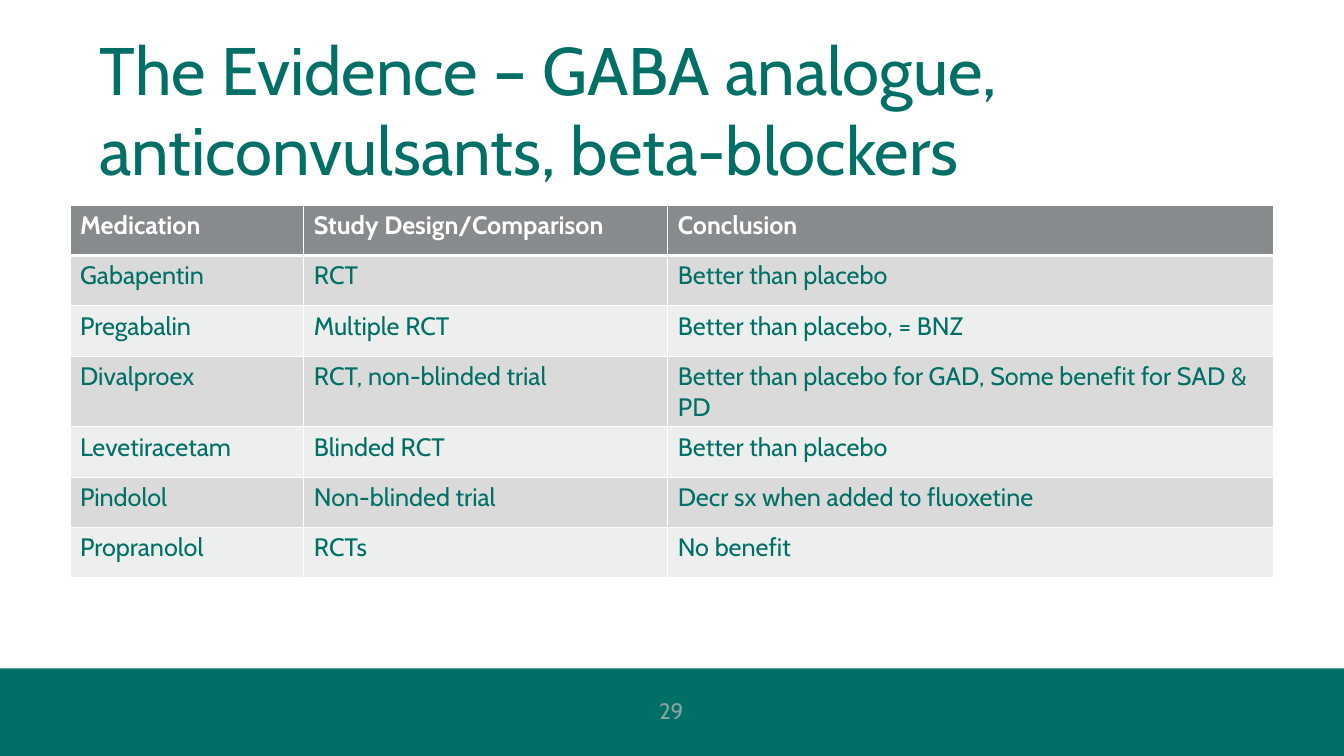
import pptx
import pptx.util
import pptx.dml.color
import pptx.enum.shapes
import pptx.enum.text
import pptx.oxml
import pptx.oxml.ns

Pt = pptx.util.Pt
RGB = pptx.dml.color.RGBColor.from_string
ANCHOR = pptx.enum.text.MSO_ANCHOR
ALIGN = pptx.enum.text.PP_ALIGN

TITLE = "The Evidence – GABA analogue, anticonvulsants, beta-blockers"
PAGE = "29"
EVIDENCE = [
    ("Medication", "Study Design/Comparison", "Conclusion"),
    ("Gabapentin", "RCT", "Better than placebo"),
    ("Pregabalin", "Multiple RCT", "Better than placebo, = BNZ"),
    ("Divalproex", "RCT, non-blinded trial",
     "Better than placebo for GAD, Some benefit for SAD & PD"),
    ("Levetiracetam", "Blinded RCT", "Better than placebo"),
    ("Pindolol", "Non-blinded trial", "Decr sx when added to fluoxetine"),
    ("Propranolol", "RCTs", "No benefit"),
]
COLUMN_WIDTHS = (167, 260, 432.7)
ROW_HEIGHT = 36
SLIDE_W, SLIDE_H = 960, 540
FOOTER_TOP = 477.4

THEME = {
    "font": "Cabin",
    "green": "006F66",
    "white": "FFFFFF",
    "page": "8CA4A0",
    "header": "888B8D",
    "bands": ("DADADB", "EDEEEE"),
    "title_size": 48,
    "cell_size": 18,
    "page_size": 16,
}


def write(tf, text, size, color, bold=False, align=ALIGN.LEFT):
    tf.word_wrap = True
    p = tf.paragraphs[0]
    p.alignment = align
    r = p.add_run()
    r.text = text
    formats = {"name": THEME["font"], "size": Pt(size), "bold": bold}
    for name, value in formats.items():
        setattr(r.font, name, value)
    r.font.color.rgb = RGB(color)


def place(shape, left, top, width, height):
    box = {"left": left, "top": top, "width": width, "height": height}
    for name, value in box.items():
        setattr(shape, name, Pt(value))


def add_borders(cell, widths):
    tcPr = cell._tc.get_or_add_tcPr()
    for position, (side, width) in enumerate(widths.items()):
        tcPr.insert(position, pptx.oxml.parse_xml(
            f'<a:{side} {pptx.oxml.ns.nsdecls("a")} w="{Pt(width)}"><a:solidFill>'
            f'<a:srgbClr val="{THEME["white"]}"/></a:solidFill></a:{side}>'))


def add_title(s):
    title = s.shapes.title
    place(title, 64, 16.5, 875.5, 63.4)
    tf = title.text_frame
    tf.auto_size = pptx.enum.text.MSO_AUTO_SIZE.NONE
    tf.vertical_anchor = ANCHOR.TOP
    write(tf, TITLE, THEME["title_size"], THEME["green"])


def add_footer(s):
    band = s.shapes.add_shape(pptx.enum.shapes.MSO_SHAPE.RECTANGLE, 0, 0, 0, 0)
    place(band, 0, FOOTER_TOP, SLIDE_W, SLIDE_H - FOOTER_TOP)
    band.shadow.inherit = False
    band.fill.solid()
    band.fill.fore_color.rgb = RGB(THEME["green"])
    band.line.fill.background()
    number = s.shapes.add_textbox(0, 0, 0, 0)
    place(number, 371.5, 493.2, 216, 28.8)
    number.text_frame.vertical_anchor = ANCHOR.MIDDLE
    write(number.text_frame, PAGE, THEME["page_size"], THEME["page"], align=ALIGN.CENTER)


def add_evidence(s):
    frame = s.shapes.add_table(
        len(EVIDENCE), len(COLUMN_WIDTHS), Pt(50), Pt(146.4),
        Pt(sum(COLUMN_WIDTHS)), Pt(ROW_HEIGHT * len(EVIDENCE)))
    table = frame.table
    for column, width in zip(table.columns, COLUMN_WIDTHS):
        column.width = Pt(width)
    for i, values in enumerate(EVIDENCE):
        table.rows[i].height = Pt(ROW_HEIGHT)
        header = i == 0
        fill = THEME["header"] if header else THEME["bands"][(i - 1) % 2]
        color = THEME["white"] if header else THEME["green"]
        borders = {"lnL": 1, "lnR": 1, "lnT": 3 if i == 1 else 1, "lnB": 3 if header else 1}
        for j, value in enumerate(values):
            cell = table.cell(i, j)
            cell.fill.solid()
            cell.fill.fore_color.rgb = RGB(fill)
            write(cell.text_frame, value, THEME["cell_size"], color, header)
            add_borders(cell, borders)


def main():
    prs = pptx.Presentation()
    prs.slide_width, prs.slide_height = Pt(SLIDE_W), Pt(SLIDE_H)
    s = prs.slides.add_slide(prs.slide_layouts[5])
    add_footer(s)
    add_title(s)
    add_evidence(s)
    prs.save("out.pptx")


if __name__ == "__main__":
    main()
